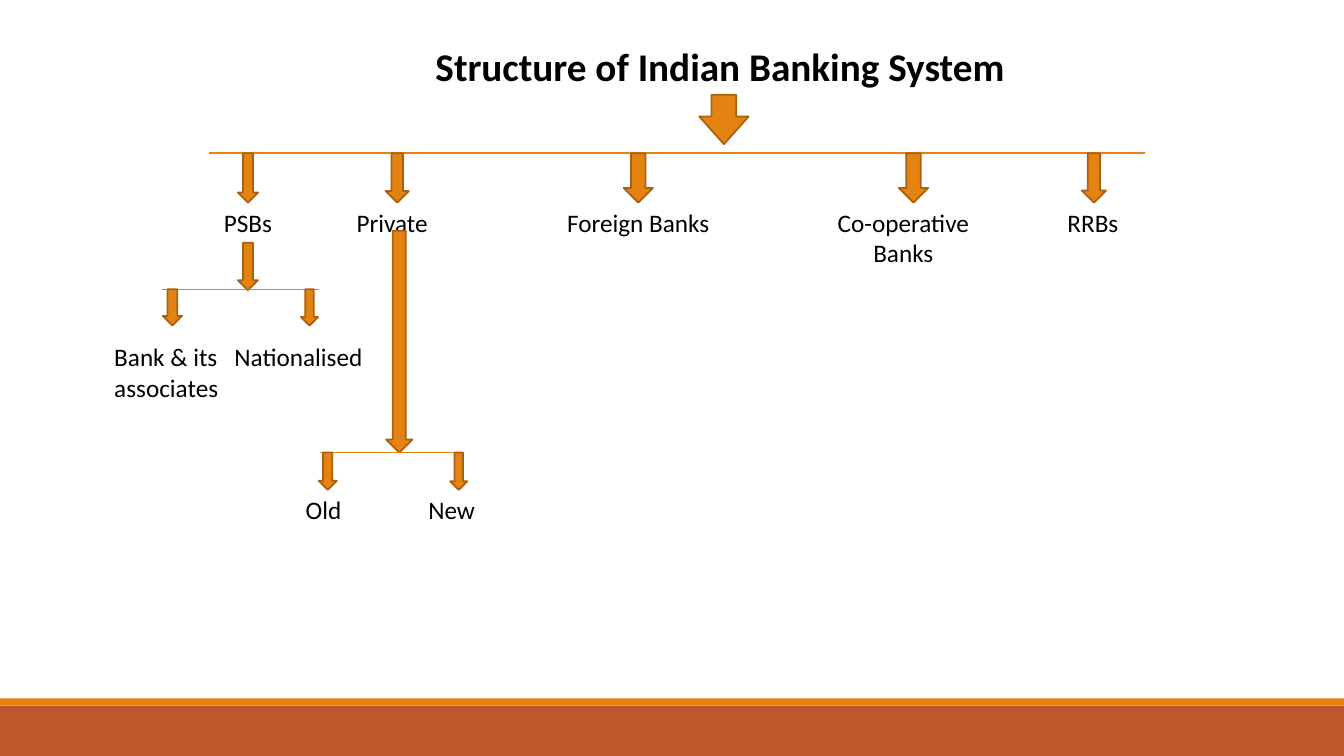
import pptx
import pptx.util
import pptx.dml.color
import pptx.enum.shapes
import pptx.enum.text
import pptx.oxml.ns
import lxml.etree

Inches, Pt = pptx.util.Inches, pptx.util.Pt
SHAPE = pptx.enum.shapes.MSO_SHAPE
ALIGN = pptx.enum.text.PP_ALIGN
ORANGE, RUST, BROWN, BLACK = "E48312", "BD582C", "A9610D", "000000"

# Each item: arrow centre, arrow width, label centre, label width, label, alignment.
# Centres are measured from the left end of the branch line.
GROUPS = [
    (0.39, 0.2, 0.39, 1.2, "PSBs", ALIGN.CENTER),
    (1.87, 0.23, 1.82, 1.2, "Private", ALIGN.CENTER),
    (4.26, 0.29, 4.26, 2.2, "Foreign Banks", ALIGN.CENTER),
    (6.99, 0.29, 6.89, 2.07, "Co-operative\nBanks", ALIGN.CENTER),
    (8.78, 0.24, 8.77, 1.2, "RRBs", ALIGN.CENTER),
]
PUBLIC = [
    (0.1, 0.19, 0.09, 1.33, "Bank & its\nassociates", ALIGN.LEFT),
    (1.46, 0.17, 1.35, 1.6, "Nationalised", ALIGN.CENTER),
]
PRIVATE = [
    (0.08, 0.18, 0.04, 1, "Old", ALIGN.CENTER),
    (1.38, 0.17, 1.31, 1, "New", ALIGN.CENTER),
]


def color(code):
    return pptx.dml.color.RGBColor.from_string(code)


def shape(slide, kind, box, fill, edge=None):
    item = slide.shapes.add_shape(kind, *map(Inches, box))
    item.shadow.inherit = False
    item.fill.solid()
    item.fill.fore_color.rgb = color(fill)
    if edge:
        item.line.color.rgb = color(edge)
        item.line.width = Pt(1.25)
    else:
        item.line.fill.background()
    return item


def arrow(slide, mid, top, width, height):
    """Draw a down arrow centred on mid."""
    box = (mid - width / 2, top, width, height)
    return shape(slide, SHAPE.DOWN_ARROW, box, ORANGE, BROWN)


def label(slide, box, words, align=ALIGN.CENTER, size=18, bold=False):
    frame = slide.shapes.add_textbox(*map(Inches, box)).text_frame
    frame.word_wrap = True
    frame.text = words
    style = {"name": "Calibri", "size": Pt(size), "bold": bold}
    for para in frame.paragraphs:
        para.alignment = align
        para.font.color.rgb = color(BLACK)
        for key, value in style.items():
            setattr(para.font, key, value)


def rule(slide, left, top, width):
    x, y, end = Inches(left), Inches(top), Inches(left + width)
    kind = pptx.enum.shapes.MSO_CONNECTOR.STRAIGHT
    line = slide.shapes.add_connector(kind, x, y, end, y)
    line.line.color.rgb = color(ORANGE)
    line.line.width = Pt(1)
    props = line._element.spPr
    lxml.etree.SubElement(props, pptx.oxml.ns.qn("a:effectLst"))


def branch(slide, box, items, gap=0):
    """Draw a line along the box top, with arrows as tall as the box and labels below."""
    left, top, width, height = box
    rule(slide, left, top, width)
    for mid, thick, centre, span, words, align in items:
        arrow(slide, left + mid, top, thick, height)
        tall = 0.4 + 0.31 * words.count("\n")
        place = (left + centre - span / 2, top + height + gap, span, tall)
        label(slide, place, words, align)


def header(slide, box):
    left, top, width, height = box
    label(slide, box, "Structure of Indian Banking System", size=28, bold=True)
    stem = arrow(slide, left + width / 2 + 0.04, top + height, 0.49, 0.49)
    stem.adjustments[1] = 0.56


def footer(slide, box):
    left, top, width, height = box
    strip = 0.07
    shape(slide, SHAPE.RECTANGLE, (left, top + strip, width, height - strip), RUST)
    shape(slide, SHAPE.RECTANGLE, (left, top, width, strip), ORANGE)


def main():
    deck = pptx.Presentation()
    deck.slide_width, deck.slide_height = Inches(13.33), Inches(7.5)
    slide = deck.slides.add_slide(deck.slide_layouts[6])
    footer(slide, (0, 6.93, 13.33, 0.57))
    header(slide, (3.64, 0.37, 7, 0.57))
    branch(slide, (2.07, 1.52, 9.29, 0.49), GROUPS)
    arrow(slide, 2.46, 2.41, 0.2, 0.47)
    branch(slide, (1.61, 2.87, 1.55, 0.36), PUBLIC, gap=0.11)
    arrow(slide, 3.96, 2.29, 0.26, 2.2)
    branch(slide, (3.17, 4.49, 1.41, 0.37), PRIVATE)
    deck.save("out.pptx")


if __name__ == "__main__":
    main()
